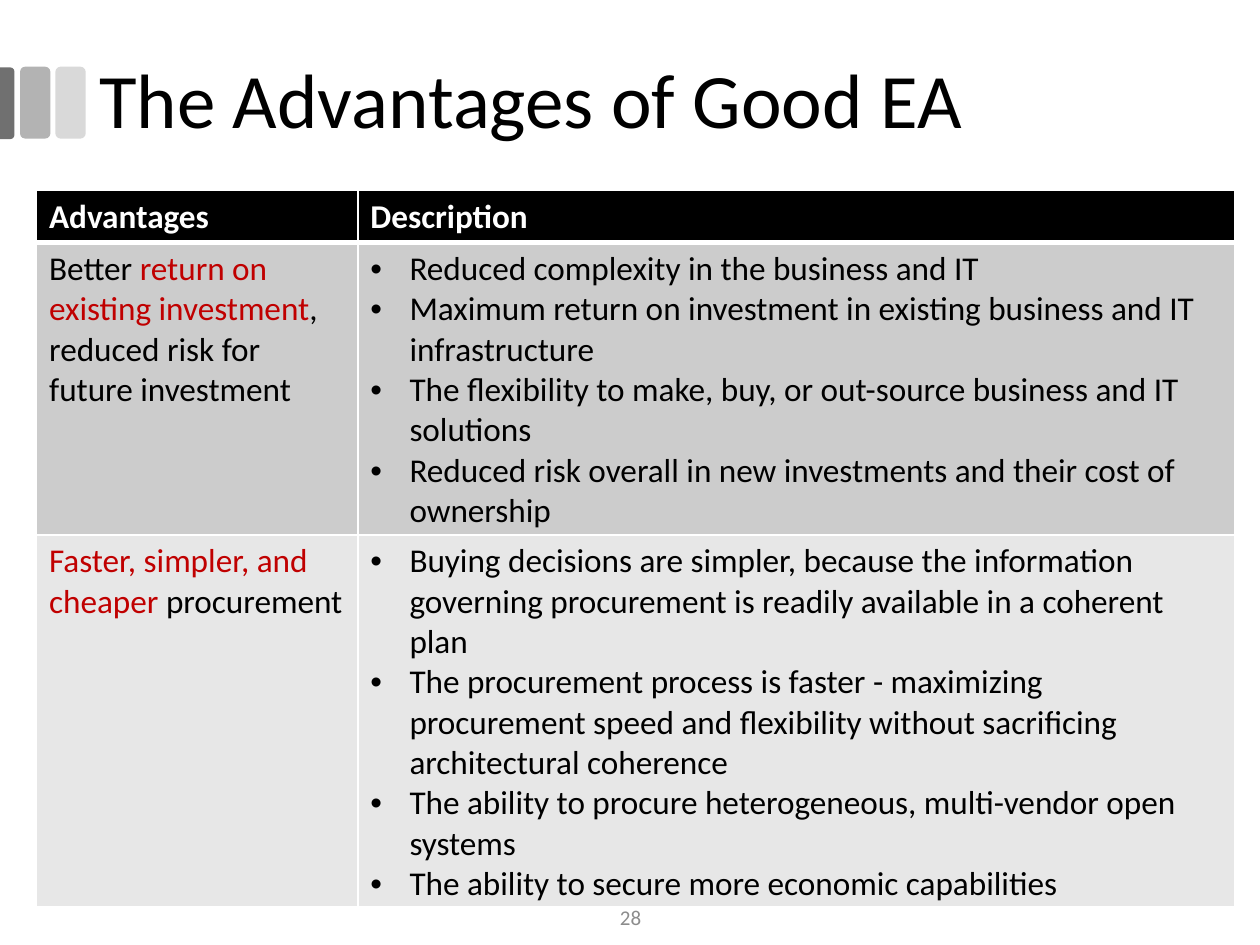
from lxml.etree import SubElement as Sub
from pptx import Presentation
from pptx.dml.color import RGBColor
from pptx.enum.shapes import MSO_SHAPE as Shape
from pptx.enum.text import MSO_ANCHOR as Anchor, PP_ALIGN as Align
from pptx.oxml.ns import qn
from pptx.util import Inches, Pt

BLACK, WHITE, RED = "000000", "FFFFFF", "C00000"
BODY = {"name": "Calibri", "size": Pt(19), "bold": False}
HEAD = {**BODY, "bold": True}
TITLE = {"name": "Calibri", "size": Pt(44)}
PAGE = {"name": "Calibri", "size": Pt(12)}

# Each row: fill, coloured runs of the advantage, bullets of the description
ROWS = [
    ("CCCCCC",
     [("Better ", BLACK), ("return on existing investment", RED),
      (", reduced risk for future investment", BLACK)],
     ["Reduced complexity in the business and IT",
      "Maximum return on investment in existing business and IT infrastructure",
      "The flexibility to make, buy, or out-source business and IT solutions",
      "Reduced risk overall in new investments and their cost of ownership"]),
    ("E7E7E7",
     [("Faster, simpler, and cheaper ", RED), ("procurement", BLACK)],
     ["Buying decisions are simpler, because the information governing "
      "procurement is readily available in a coherent plan",
      "The procurement process is faster - maximizing procurement speed and "
      "flexibility without sacrificing architectural coherence",
      "The ability to procure heterogeneous, multi-vendor open systems",
      "The ability to secure more economic capabilities"]),
]


def paint(fmt, color):
    """Give a fill a solid colour."""
    fmt.solid()
    fmt.fore_color.rgb = RGBColor.from_string(color)


def write(para, runs, look):
    """Add (text, colour) runs that share one set of font values."""
    for text, color in runs:
        run = para.add_run()
        run.text = text
        for key, value in look.items():
            setattr(run.font, key, value)
        paint(run.font.fill, color)


def add_text(slide, box, text, color, look, form):
    frame = slide.shapes.add_textbox(*map(Inches, box)).text_frame
    frame.word_wrap = True
    frame.vertical_anchor = Anchor.MIDDLE
    para = frame.paragraphs[0]
    for key, value in form.items():
        setattr(para, key, value)
    write(para, [(text, color)], look)


def add_block(slide, kind, box, color):
    block = slide.shapes.add_shape(kind, *map(Inches, box))
    block.shadow.inherit = False
    paint(block.fill, color)
    block.line.fill.background()
    return block


def set_cell(cell, color, base=1):
    """White borders, then the fill; base is the bottom width in points."""
    props = cell._tc.get_or_add_tcPr()
    for side in "LRTB":
        width = Pt(base if side == "B" else 1)
        line = Sub(props, qn(f"a:ln{side}"), w=str(width))
        Sub(Sub(line, qn("a:solidFill")), qn("a:srgbClr"), val=WHITE)
    paint(cell.fill, color)


def add_list(frame, items):
    for i, item in enumerate(items):
        para = frame.add_paragraph() if i else frame.paragraphs[0]
        props = para._p.get_or_add_pPr()
        props.set("marL", str(Inches(0.31)))
        props.set("indent", str(Inches(-0.31)))
        Sub(props, qn("a:buFont"), typeface="Arial")
        Sub(props, qn("a:buChar"), char="•")
        write(para, [(item, BLACK)], BODY)


def add_grid(slide):
    box = map(Inches, (0.29, 1.51, 9.51, 5.68))
    table = slide.shapes.add_table(len(ROWS) + 1, 2, *box).table
    for col, width in zip(table.columns, (2.55, 6.96)):
        col.width = Inches(width)
    for row, height in zip(table.rows, (0.41, 2.32, 2.95)):
        row.height = Inches(height)

    # Header row
    for i, name in enumerate(("Advantages", "Description")):
        cell = table.cell(0, i)
        set_cell(cell, BLACK, base=3)
        write(cell.text_frame.paragraphs[0], [(name, WHITE)], HEAD)

    # Body rows
    for i, (color, runs, items) in enumerate(ROWS, 1):
        left, right = table.cell(i, 0), table.cell(i, 1)
        for cell in (left, right):
            set_cell(cell, color)
        write(left.text_frame.paragraphs[0], runs, BODY)
        add_list(right.text_frame, items)


def main():
    deck = Presentation()
    deck.slide_width, deck.slide_height = Inches(10), Inches(7.5)
    slide = deck.slides.add_slide(deck.slide_layouts[6])

    # Grey blocks at the left edge
    for x, color in ((0.44, "D9D9D9"), (0.16, "B3B3B3")):
        add_block(slide, Shape.ROUNDED_RECTANGLE, (x, 0.53, 0.24, 0.57), color)
    edge = add_block(slide, Shape.ROUND_2_SAME_RECTANGLE,
                     (-0.23, 0.76, 0.57, 0.12), "707070")
    edge.rotation = 90
    edge.adjustments[0] = 0.29

    # Title, table and page number
    add_text(slide, (0.69, 0.17, 8.62, 1.31), "The Advantages of Good EA",
             BLACK, TITLE, {"line_spacing": 0.9})
    add_grid(slide)
    add_text(slide, (3.88, 7.08, 2.25, 0.4), "28", "8C8C8C", PAGE,
             {"alignment": Align.CENTER})
    deck.save("out.pptx")


if __name__ == "__main__":
    main()
